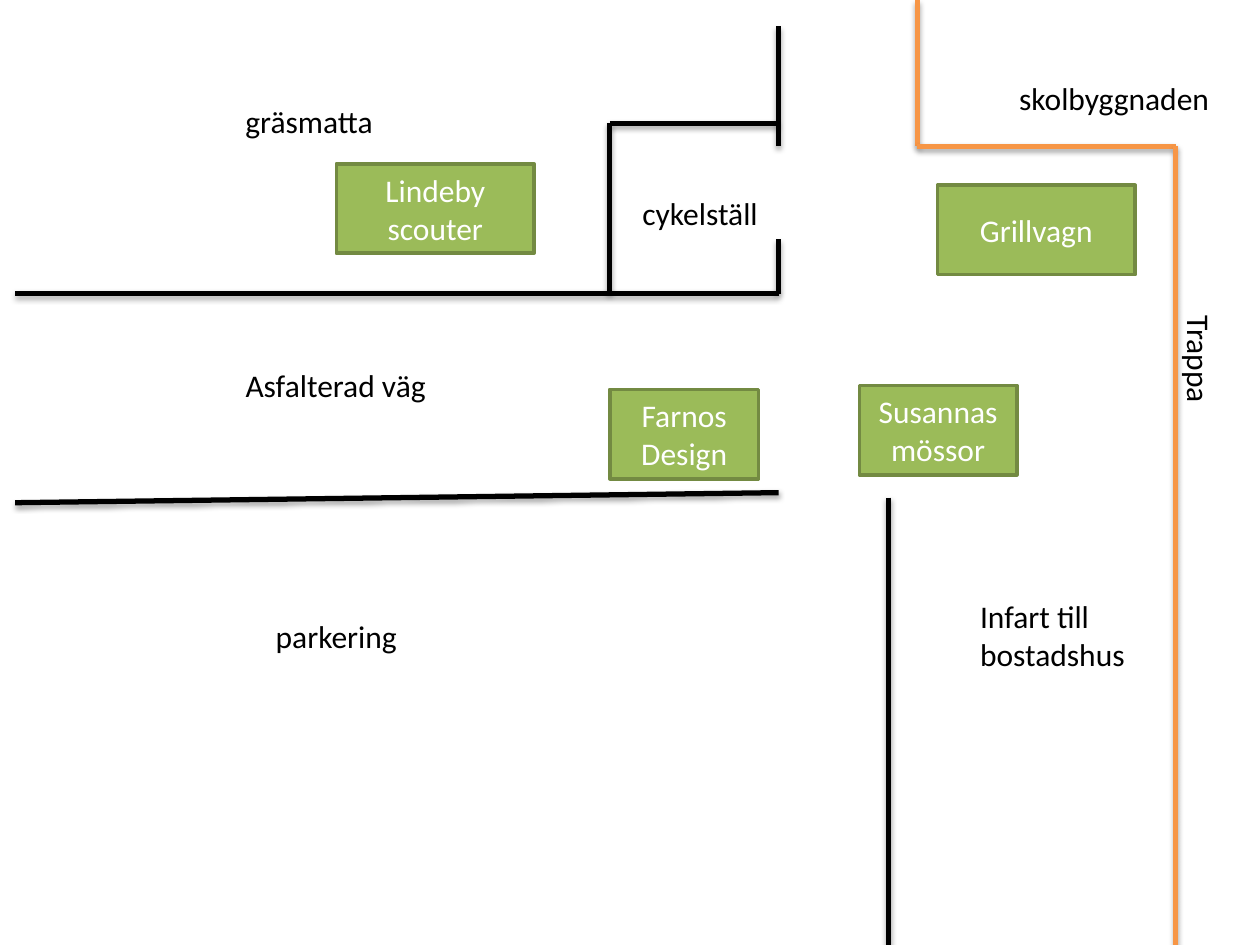
from dataclasses import dataclass
from itertools import pairwise

from lxml.etree import SubElement
from pptx import Presentation
from pptx.dml.color import RGBColor
from pptx.enum.shapes import MSO_CONNECTOR, MSO_SHAPE
from pptx.enum.text import MSO_ANCHOR, MSO_AUTO_SIZE, PP_ALIGN
from pptx.oxml.ns import qn
from pptx.util import Emu, Inches, Pt

COLUMNS, ROWS = 100, 75  # grid laid over the whole slide


@dataclass(frozen=True)
class Theme:
    font: str = "Calibri"
    text_size: float = 18
    wall_width: float = 3
    stall_border: float = 2
    ink: str = "000000"
    school: str = "F79646"
    stall_fill: str = "9BBB59"
    stall_line: str = "738A42"
    stall_text: str = "FFFFFF"


@dataclass(frozen=True)
class Wall:
    corners: tuple  # (column, row) of each corner in turn
    color: str


@dataclass(frozen=True)
class Stall:
    name: str
    column: float
    row: float
    columns: float
    rows: float = 7.1


@dataclass(frozen=True)
class Label:
    lines: tuple
    column: float
    row: float
    columns: float
    rows: float = 4
    rotation: float = 0


THEME = Theme()

# Shared map positions
LEFT, STAND, GATE, DRIVE = 1.2, 48.4, 61.8, 70.5
SCHOOL, STAIRS = 72.8, 93.3
STAND_TOP, CORNER, ROAD = 9.8, 11.6, 23.3

WALLS = (
    Wall(((LEFT, ROAD), (GATE, ROAD), (GATE, 19)), THEME.ink),
    Wall(((LEFT, 39.9), (GATE, 39.1)), THEME.ink),
    Wall(((STAND, ROAD), (STAND, STAND_TOP), (GATE, STAND_TOP)), THEME.ink),
    Wall(((GATE, CORNER), (GATE, 2.1)), THEME.ink),
    Wall(((DRIVE, 39.5), (DRIVE, ROWS)), THEME.ink),
    Wall(((SCHOOL, 0), (SCHOOL, CORNER), (STAIRS, CORNER), (STAIRS, ROWS)), THEME.school),
)

STALLS = (
    Stall("Grillvagn", 74.4, 14.7, 15.7),
    Stall("Lindeby scouter", 26.7, 13, 15.7),
    Stall("Farnos Design", STAND, 30.9, 11.8),
    Stall("Susannas mössor", 68.2, 30.6, 12.5),
)

LABELS = (
    Label(("parkering",), 20.9, 48.5, 11.7),
    Label(("gräsmatta",), 18.5, 7.6, 12.3),
    Label(("skolbyggnaden",), 79.9, 5.8, 17.3),
    Label(("Trappa",), 90.7, 26.6, 9, rotation=90),
    Label(("cykelställ",), 50, 14.9, 11.3),
    Label(("Asfalterad väg",), 18.5, 28.6, 16.5),
    Label(("Infart till", "bostadshus"), 76.8, 46.9, 13.6, 7.1),
)

deck = Presentation()
deck.slide_width, deck.slide_height = Inches(10), Inches(7.5)
page = deck.slides.add_slide(deck.slide_layouts[6])


def across(columns: float) -> Emu:
    return Emu(round(deck.slide_width * columns / COLUMNS))


def down(rows: float) -> Emu:
    return Emu(round(deck.slide_height * rows / ROWS))


def set_values(target, values: dict) -> None:
    for name, value in values.items():
        setattr(target, name, value)


def add_soft_shadow(line) -> None:
    effects = SubElement(line._element.spPr, qn("a:effectLst"))
    shadow = SubElement(effects, qn("a:outerShdw"), blurRad=str(Pt(3.1)),
                        dist=str(Pt(1.8)), dir="5400000", rotWithShape="0")
    color = SubElement(shadow, qn("a:srgbClr"), val=THEME.ink)
    SubElement(color, qn("a:alpha"), val="35000")


def draw_wall(wall: Wall) -> None:
    for (x1, y1), (x2, y2) in pairwise(wall.corners):
        line = page.shapes.add_connector(
            MSO_CONNECTOR.STRAIGHT, across(x1), down(y1), across(x2), down(y2))
        line.line.width = Pt(THEME.wall_width)
        line.line.color.rgb = RGBColor.from_string(wall.color)
        add_soft_shadow(line)


def write(frame, lines: tuple, color: str, alignment: PP_ALIGN) -> None:
    for index, words in enumerate(lines):
        para = frame.add_paragraph() if index else frame.paragraphs[0]
        para.alignment = alignment
        span = para.add_run()
        span.text = words
        set_values(span.font, {"name": THEME.font, "size": Pt(THEME.text_size)})
        span.font.color.rgb = RGBColor.from_string(color)


def draw_stall(stall: Stall) -> None:
    box = page.shapes.add_shape(
        MSO_SHAPE.RECTANGLE, across(stall.column), down(stall.row),
        across(stall.columns), down(stall.rows))
    box.shadow.inherit = False
    box.fill.solid()
    box.fill.fore_color.rgb = RGBColor.from_string(THEME.stall_fill)
    box.line.color.rgb = RGBColor.from_string(THEME.stall_line)
    box.line.width = Pt(THEME.stall_border)
    set_values(box.text_frame, {"word_wrap": True, "vertical_anchor": MSO_ANCHOR.MIDDLE})
    write(box.text_frame, (stall.name,), THEME.stall_text, PP_ALIGN.CENTER)


def draw_label(label: Label) -> None:
    box = page.shapes.add_textbox(
        across(label.column), down(label.row), across(label.columns), down(label.rows))
    box.rotation = label.rotation
    set_values(box.text_frame, {"word_wrap": False,
                                "auto_size": MSO_AUTO_SIZE.SHAPE_TO_FIT_TEXT})
    write(box.text_frame, label.lines, THEME.ink, PP_ALIGN.LEFT)


# Walls and road edges, then stalls, then place names
for draw, items in ((draw_wall, WALLS), (draw_stall, STALLS), (draw_label, LABELS)):
    for item in items:
        draw(item)

deck.save("out.pptx")
